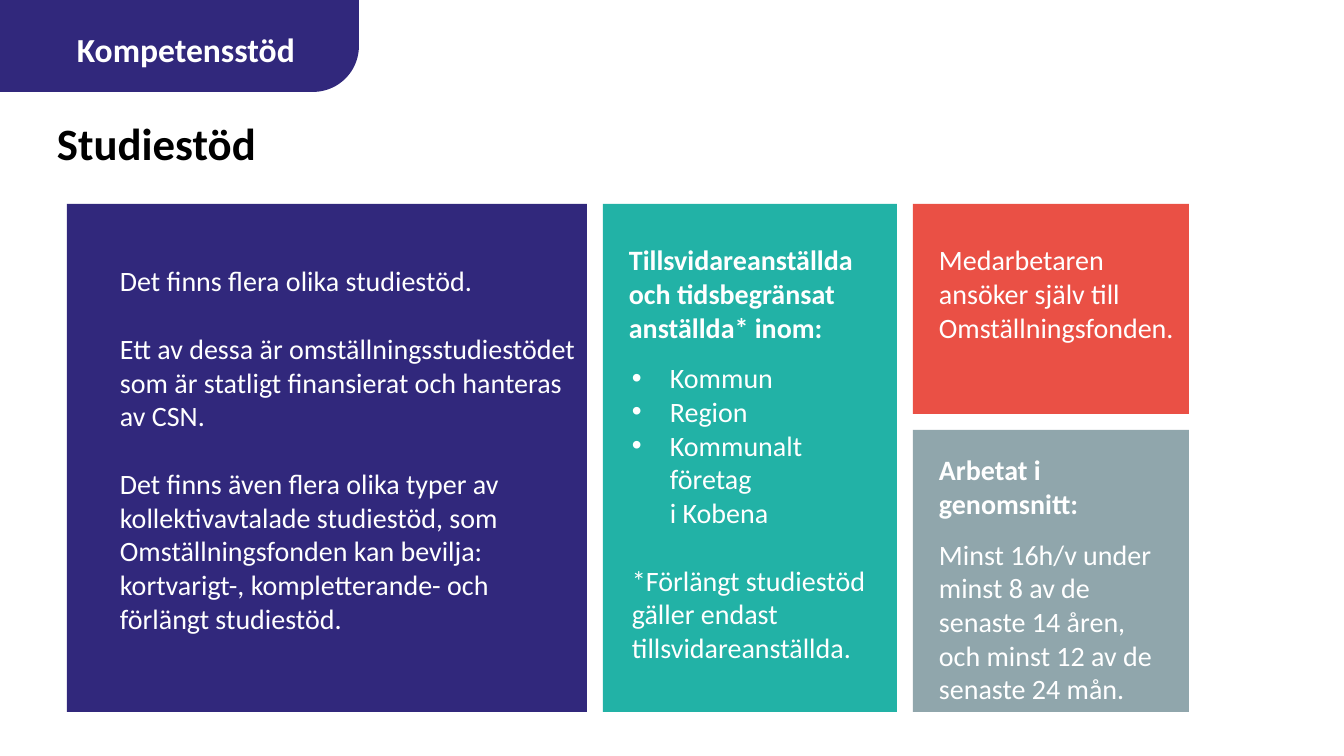
import pptx
import pptx.util
import pptx.dml.color
import pptx.enum.shapes
import pptx.oxml.ns
import lxml.etree

RGBColor = pptx.dml.color.RGBColor
INDIGO = RGBColor(0x31, 0x28, 0x7C)
TEAL = RGBColor(0x22, 0xB2, 0xA6)
CORAL = RGBColor(0xEA, 0x50, 0x45)
SLATE = RGBColor(0x90, 0xA6, 0xAC)
WHITE = RGBColor(0xFF, 0xFF, 0xFF)
BLACK = RGBColor(0, 0, 0)
FONT = "Calibri"
PX_PER_INCH = 100.8
FULL_GAP, HALF_GAP = 24.4, 12.2  # points between paragraphs
GAP = 16  # px between panels


def px(length):
    return pptx.util.Emu(round(length * 914400 / PX_PER_INCH))


def add_block(page, kind, left, top, width, height, color):
    block = page.shapes.add_shape(kind, px(left), px(top), px(width), px(height))
    block.shadow.inherit = False
    block.fill.solid()
    block.fill.fore_color.rgb = color
    block.line.fill.background()
    return block


def set_indent(para, margin, hanging, bullet):
    properties = para._p.get_or_add_pPr()
    properties.set("marL", str(px(margin)))
    properties.set("indent", str(px(-hanging)))
    if bullet:
        for tag, name, value in (("a:buFont", "typeface", "Arial"), ("a:buChar", "char", "•")):
            mark = lxml.etree.SubElement(properties, pptx.oxml.ns.qn(tag))
            mark.set(name, value)


def add_text(page, left, top, width, height, paragraphs, size=20, color=WHITE, margin=None):
    box = page.shapes.add_textbox(px(left), px(top), px(width), px(height))
    frame = box.text_frame
    frame.word_wrap = True
    if margin is not None:
        frame.margin_left = frame.margin_right = px(margin)
        frame.margin_top = frame.margin_bottom = px(margin)
    for index, item in enumerate(paragraphs):
        para = frame.add_paragraph() if index else frame.paragraphs[0]
        if "indent" in item:
            set_indent(para, *item["indent"])
        if "before" in item:
            para.space_before = pptx.util.Pt(item["before"])
        for number, line in enumerate(item["text"].split("\n")):
            if number:
                para.add_line_break()
            span = para.add_run()
            span.text = line
            span.font.name = FONT
            span.font.size = pptx.util.Pt(size)
            span.font.bold = item.get("bold", False)
            span.font.color.rgb = color


def add_header(page, left, top, width, height):
    # Tab with its lower right corner rounded
    tab = add_block(page, pptx.enum.shapes.MSO_SHAPE.ROUND_1_RECTANGLE,
                    left, top, width, height, INDIGO)
    tab.adjustments[0] = 0.5
    tab.element.spPr.xfrm.set("flipV", "1")
    add_text(page, left + 67, top + 24, 258, 50,
             [{"text": "Kompetensstöd", "bold": True}], size=24)
    # Title
    add_text(page, left + 57, top + 116, 1210, 107,
             [{"text": "Studiestöd", "bold": True}], size=32, color=BLACK, margin=0)


def add_panel(page, box, color, text_box, paragraphs):
    left, top, width, height = box
    text_left, text_top, text_width, text_height = text_box
    add_block(page, pptx.enum.shapes.MSO_SHAPE.RECTANGLE, left, top, width, height, color)
    add_text(page, left + text_left, top + text_top, text_width, text_height, paragraphs)


def add_panels(page, left, top, height):
    wide, middle, narrow, upper = 520, 294, 276, 210
    middle_left = left + wide + GAP
    right_left = middle_left + middle + GAP
    lower_top = top + upper + GAP
    bullet = (41, 38, True)

    # Kinds of support
    add_panel(page, (left, top, wide, height), INDIGO, (43, 55, 478, 383), [
        {"text": "Det finns flera olika studiestöd."},
        {"text": "Ett av dessa är omställningsstudiestödet som är statligt finansierat "
                 "och hanteras av CSN.", "before": FULL_GAP},
        {"text": "Det finns även flera olika typer av kollektivavtalade studiestöd, som "
                 "Omställningsfonden kan bevilja: kortvarigt-, kompletterande- och "
                 "förlängt studiestöd.", "before": FULL_GAP},
    ])
    # Who is covered
    add_panel(page, (middle_left, top, middle, height), TEAL, (16, 34, 279, 434), [
        {"text": "Tillsvidareanställda och tidsbegränsat anställda* inom:", "bold": True},
        {"text": "Kommun", "indent": bullet, "before": HALF_GAP},
        {"text": "Region", "indent": bullet},
        {"text": "Kommunalt företag \ni Kobena", "indent": bullet},
        {"text": "*Förlängt studiestöd gäller endast tillsvidareanställda.",
         "indent": (3, 0, False), "before": FULL_GAP},
    ])
    # How to apply
    add_panel(page, (right_left, top, narrow, upper), CORAL, (16, 34, 261, 112), [
        {"text": "Medarbetaren ansöker själv till Omställningsfonden."},
    ])
    # Working time required
    add_panel(page, (right_left, lower_top, narrow, height - upper - GAP), SLATE,
              (16, 18, 243, 265), [
        {"text": "Arbetat i genomsnitt:", "bold": True},
        {"text": "Minst 16h/v under minst 8 av de senaste 14 åren, och minst 12 av de "
                 "senaste 24 mån.", "before": HALF_GAP},
    ])


def main():
    deck = pptx.Presentation()
    deck.slide_width, deck.slide_height = px(1344), px(756)
    page = deck.slides.add_slide(deck.slide_layouts[6])
    add_panels(page, 67, 204, 508)
    add_header(page, 0, 0, 359, 92)
    deck.save("out.pptx")


if __name__ == "__main__":
    main()
